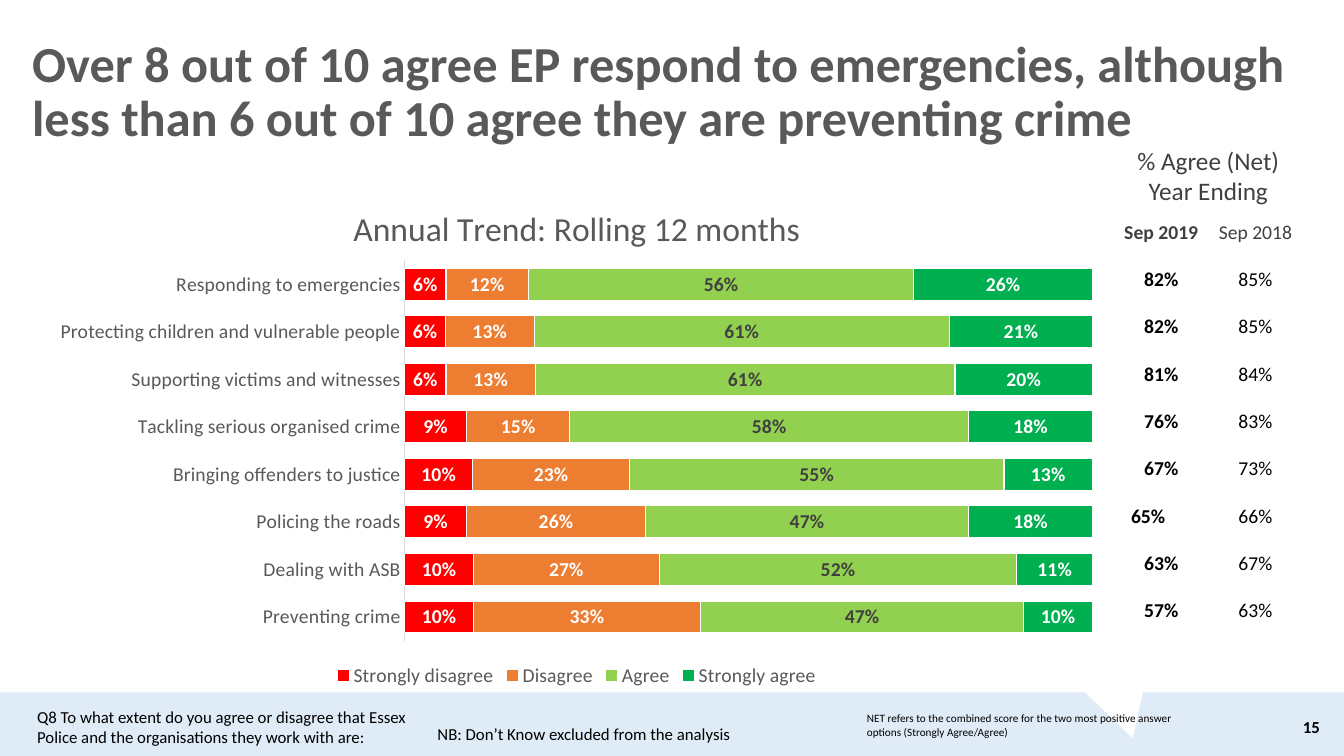
import pptx
import pptx.chart.data
import pptx.dml.color
import pptx.enum.chart
import pptx.enum.shapes
import pptx.enum.text
import pptx.oxml
import pptx.oxml.ns
import pptx.util
from pptx.util import Inches

COLOURS = {
    "black": "000000", "white": "FFFFFF", "title": "595959", "heading": "404040",
    "footer": "DFEBF7", "axis": "D9D9D9", "strongly disagree": "FF0000",
    "disagree": "ED7D31", "agree": "92D050", "strongly agree": "00B050",
}
FONT = "Calibri"
ALIGN = pptx.enum.text.PP_ALIGN
MIDDLE = pptx.enum.text.MSO_ANCHOR.MIDDLE


def rgb(name):
    return pptx.dml.color.RGBColor.from_string(COLOURS[name])


def style(font, size, colour, bold=False):
    font.name = FONT
    font.size = pptx.util.Pt(size)
    font.bold = bold
    font.color.rgb = rgb(colour)


deck = pptx.Presentation()
deck.slide_width, deck.slide_height = Inches(13.33), Inches(7.5)
slide = deck.slides.add_slide(deck.slide_layouts[6])

# Footer band with its notch
preset = pptx.enum.shapes.MSO_SHAPE
for kind, box, colour, rotation in [
    (preset.RECTANGLE, (0, 6.87, 13.33, 0.63), "footer", 0),
    (preset.ISOSCELES_TRIANGLE, (10.75, 6.65, 0.77, 0.69), "white", 163.1),
]:
    part = slide.shapes.add_shape(kind, *map(Inches, box))
    part.rotation = rotation
    part.shadow.inherit = False
    part.fill.solid()
    part.fill.fore_color.rgb = rgb(colour)
    part.line.fill.background()

# Headline, question, notes and page number
TOP = pptx.enum.text.MSO_ANCHOR.TOP
for words, box, size, colour, bold, align, anchor, spacing in [
    ("15", (12.62, 7.01, 0.57, 0.4), 12, "black", True, ALIGN.RIGHT, MIDDLE, 1.0),
    ("Over 8 out of 10 agree EP respond to emergencies, although less than 6 out of 10 "
     "agree they are preventing crime",
     (0.22, 0.2, 12.97, 1.45), 36, "title", True, ALIGN.LEFT, MIDDLE, 0.9),
    ("Q8 To what extent do you agree or disagree that Essex Police and the organisations "
     "they work with are:",
     (0.27, 6.96, 3.89, 0.5), 12, "black", False, ALIGN.LEFT, TOP, 1.0),
    ("NB: Don’t Know excluded from the analysis",
     (4.24, 7.13, 3.19, 0.3), 12, "black", False, ALIGN.LEFT, TOP, 1.0),
    ("NET refers to the combined score for the two most positive answer options "
     "(Strongly Agree/Agree)",
     (8.5, 7.01, 3.38, 0.37), 8, "black", False, ALIGN.LEFT, TOP, 1.0),
]:
    frame = slide.shapes.add_textbox(*map(Inches, box)).text_frame
    frame.word_wrap = True
    frame.vertical_anchor = anchor
    paragraph = frame.paragraphs[0]
    paragraph.alignment = align
    paragraph.line_spacing = spacing
    run = paragraph.add_run()
    run.text = words
    style(run.font, size, colour, bold)

# Stacked bars of agreement
answers = pptx.chart.data.CategoryChartData(number_format="0%")
answers.categories = [
    "Responding to emergencies", "Protecting children and vulnerable people",
    "Supporting victims and witnesses", "Tackling serious organised crime",
    "Bringing offenders to justice", "Policing the roads", "Dealing with ASB",
    "Preventing crime",
]
for answer, shares in [
    ("Strongly disagree", (0.06, 0.06, 0.06, 0.09, 0.1, 0.09, 0.1, 0.1)),
    ("Disagree", (0.12, 0.13, 0.13, 0.15, 0.23, 0.26, 0.27, 0.33)),
    ("Agree", (0.56, 0.61, 0.61, 0.58, 0.55, 0.47, 0.52, 0.47)),
    ("Strongly agree", (0.26, 0.21, 0.2, 0.18, 0.13, 0.18, 0.11, 0.1)),
]:
    answers.add_series(answer, shares)

chart = slide.shapes.add_chart(
    pptx.enum.chart.XL_CHART_TYPE.BAR_STACKED_100,
    Inches(0.39), Inches(1.83), Inches(10.66), Inches(5.03), answers).chart
style(chart.font, 14, "title")

chart.has_title = True
heading = chart.chart_title.text_frame.paragraphs[0].add_run()
heading.text = "Annual Trend: Rolling 12 months"
style(heading.font, 24, "title")

chart.has_legend = True
chart.legend.position = pptx.enum.chart.XL_LEGEND_POSITION.BOTTOM
chart.legend.include_in_layout = False
style(chart.legend.font, 14, "title")

topics = chart.category_axis
topics.reverse_order = True
topics.major_tick_mark = pptx.enum.chart.XL_TICK_MARK.NONE
topics.format.line.color.rgb = rgb("axis")
topics.format.line.width = pptx.util.Pt(0.75)
style(topics.tick_labels.font, 14, "title")
chart.value_axis.has_major_gridlines = False
chart.value_axis.visible = False

bars = chart.plots[0]
bars.gap_width = 50
bars.overlap = 100
bars.vary_by_categories = False
for series in bars.series:
    series.format.fill.solid()
    series.format.fill.fore_color.rgb = rgb(series.name.lower())
    series.format.line.color.rgb = rgb("white")
    series.format.line.width = pptx.util.Pt(0.75)
    labels = series.data_labels
    labels.show_value = True
    labels.number_format = "0%"
    labels.number_format_is_linked = False
    labels.position = pptx.enum.chart.XL_LABEL_POSITION.CENTER
    style(labels.font, 14, "heading" if series.name == "Agree" else "white", True)

# Fixed places for the chart title and the bars, as shares of the chart area
title_layout = chart.chart_title._element.get_or_add_layout() if hasattr(
    chart.chart_title._element, "get_or_add_layout") else None
plot_area = chart._chartSpace.chart.plotArea
for parent, old, index, target, places in [
    (chart.chart_title._element, title_layout, 1, "", {"x": 0.29, "y": 0.04}),
    (plot_area, plot_area.find(pptx.oxml.ns.qn("c:layout")), 0,
     '<c:layoutTarget val="inner"/>', {"x": 0.34, "y": 0.15, "w": 0.64, "h": 0.75}),
]:
    if old is not None:
        parent.remove(old)
    modes = "".join(f'<c:{key}Mode val="edge"/>' for key in "xy")
    values = "".join(f'<c:{key} val="{share}"/>' for key, share in places.items())
    parent.insert(index, pptx.oxml.parse_xml(
        f'<c:layout {pptx.oxml.ns.nsdecls("c")}><c:manualLayout>'
        f'{target}{modes}{values}</c:manualLayout></c:layout>'))

# Net agreement table
net_agree = [
    ("% Agree (Net)", ""), ("Sep 2019", "Sep 2018"), ("82%", "85%"), ("82%", "85%"),
    ("81%", "84%"), ("76%", "83%"), ("67%", "73%"), ("65%", "66%"), ("63%", "67%"),
    ("57%", "63%"),
]
table_frame = slide.shapes.add_table(
    len(net_agree), 2, Inches(11.05), Inches(1.44), Inches(1.87), Inches(4.85))
table = table_frame.table
table.first_row = table.horz_banding = False
table.cell(0, 0).merge(table.cell(0, 1))
for row, entries in enumerate(net_agree):
    table.rows[row].height = Inches(0.47 if row else 0.63)
    for column, entry in enumerate(entries):
        cell = table.cell(row, column)
        cell.fill.background()
        cell.margin_left = cell.margin_right = cell.margin_top = cell.margin_bottom = 0
        cell.vertical_anchor = MIDDLE
        if entry == "65%":
            cell.margin_right = Inches(0.26)
        lines = [entry, "Year Ending"] if row == 0 and column == 0 else [entry]
        for number, line in enumerate(lines):
            frame = cell.text_frame
            paragraph = frame.add_paragraph() if number else frame.paragraphs[0]
            paragraph.alignment = ALIGN.CENTER
            if line:
                run = paragraph.add_run()
                run.text = line
                style(run.font, 14 if row else 18, "black" if row > 1 else "heading",
                      row > 0 and column == 0)

# Plain table style without borders
table_style = table_frame._element.find(".//" + pptx.oxml.ns.qn("a:tableStyleId"))
table_style.text = "{2D5ABB26-0587-4C30-8999-92F81FD0307C}"

deck.save("out.pptx")
